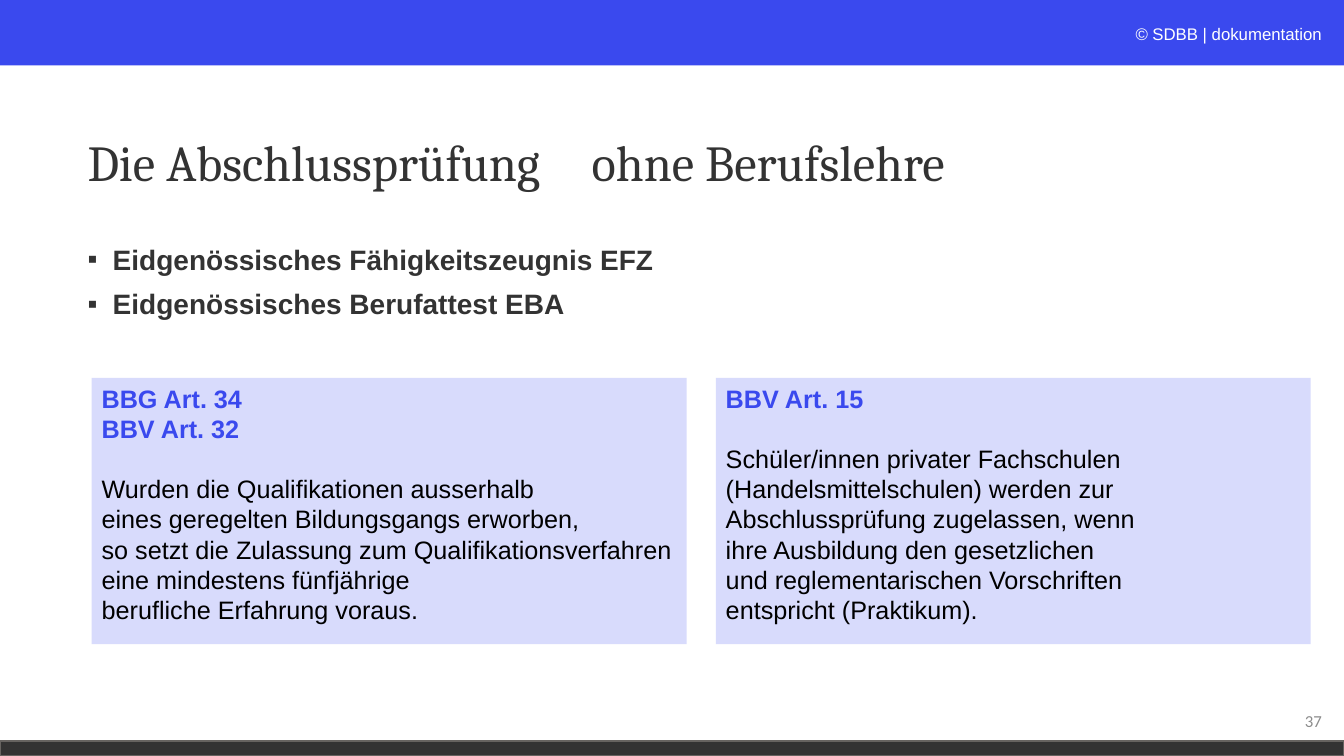
import pptx
import pptx.dml.color
import pptx.enum.shapes
import pptx.enum.text
import pptx.oxml.ns
import pptx.util
from lxml import etree
from pptx.util import Inches

RGBColor = pptx.dml.color.RGBColor
PP_ALIGN = pptx.enum.text.PP_ALIGN
MSO_ANCHOR = pptx.enum.text.MSO_ANCHOR

BLUE = RGBColor(0x3A, 0x49, 0xEE)
PALE_BLUE = RGBColor(0xD8, 0xDB, 0xFC)
DARK = RGBColor(0x33, 0x33, 0x33)
EDGE = RGBColor(0x66, 0x63, 0x60)
GREY = RGBColor(0x8C, 0x8C, 0x8C)
NEAR_WHITE = RGBColor(0xFC, 0xFD, 0xFE)
WHITE = RGBColor(0xFF, 0xFF, 0xFF)
BLACK = RGBColor(0, 0, 0)

SLIDE_WIDTH, SLIDE_HEIGHT = Inches(13.33), Inches(7.5)
MARGIN = Inches(0.77)
TEXT_WIDTH = Inches(11.5)
CARD_LEFT, CARD_TOP = Inches(0.91), Inches(3.75)
CARD_WIDTH, CARD_HEIGHT = Inches(5.9), Inches(2.64)
CARD_STEP = CARD_WIDTH + Inches(0.29)

DEGREES = ["Eidgenössisches Fähigkeitszeugnis EFZ", "Eidgenössisches Berufattest EBA"]
CARDS = [
    (["BBG Art. 34", "BBV Art. 32"],
     ["Wurden die Qualifikationen ausserhalb",
      "eines geregelten Bildungsgangs erworben,",
      "so setzt die Zulassung zum Qualifikationsverfahren",
      "eine mindestens fünfjährige",
      "berufliche Erfahrung voraus."]),
    (["BBV Art. 15"],
     ["Schüler/innen privater Fachschulen",
      "(Handelsmittelschulen) werden zur",
      "Abschlussprüfung zugelassen, wenn",
      "ihre Ausbildung den gesetzlichen",
      "und reglementarischen Vorschriften",
      "entspricht (Praktikum)."]),
]


def add_run(paragraph, text, size, color, font="Arial", bold=False, italic=False):
    run = paragraph.add_run()
    run.text = text
    run.font.size = pptx.util.Pt(size)
    run.font.name = font
    run.font.bold = bold
    run.font.italic = italic
    run.font.color.rgb = color


def add_paragraph(frame, index):
    return frame.paragraphs[0] if index == 0 else frame.add_paragraph()


def add_sub(parent, tag, **attributes):
    return etree.SubElement(parent, pptx.oxml.ns.qn(tag), attributes)


def add_panel(slide, left, top, width, height, fill):
    panel = slide.shapes.add_shape(
        pptx.enum.shapes.MSO_SHAPE.RECTANGLE, left, top, width, height)
    panel.shadow.inherit = False
    panel.fill.solid()
    panel.fill.fore_color.rgb = fill
    panel.line.fill.background()
    return panel


def add_text_frame(slide, left, top, width, height, anchor=MSO_ANCHOR.TOP):
    frame = slide.shapes.add_textbox(left, top, width, height).text_frame
    frame.word_wrap = True
    frame.vertical_anchor = anchor
    return frame


def add_header(slide, left, top, width, height):
    add_panel(slide, left, top, width, height, BLUE)
    copyright_width = Inches(4.59)
    frame = add_text_frame(slide, left + width - copyright_width - Inches(0.12),
                           top + Inches(0.19), copyright_width, Inches(0.3))
    paragraph = frame.paragraphs[0]
    paragraph.alignment = PP_ALIGN.RIGHT
    add_run(paragraph, "© ", 12, NEAR_WHITE, italic=True)
    add_run(paragraph, "SDBB | dokumentation", 12, WHITE)


def add_footer(slide, left, top, width, height):
    bar = add_panel(slide, left, top, width, height, DARK)
    bar.line.color.rgb = EDGE
    bar.line.width = pptx.util.Pt(1)
    number_width = Inches(3)
    frame = add_text_frame(slide, left + width - number_width - Inches(0.12),
                           top - Inches(0.4), number_width, Inches(0.4),
                           MSO_ANCHOR.MIDDLE)
    paragraph = frame.paragraphs[0]
    paragraph.alignment = PP_ALIGN.RIGHT
    add_run(paragraph, "37", 12, GREY, "Calibri")


def add_title(slide, left, top, width, height):
    frame = add_text_frame(slide, left, top, width, height, MSO_ANCHOR.MIDDLE)
    paragraph = frame.paragraphs[0]
    tabs = add_sub(paragraph._p.get_or_add_pPr(), "a:tabLst")
    add_sub(tabs, "a:tab", pos=str(Inches(5)), algn="l")
    paragraph.line_spacing = 0.9
    add_run(paragraph, "Die Abschlussprüfung\tohne Berufslehre", 36, DARK, "Cambria")


def add_degrees(slide, left, top, width, height):
    frame = add_text_frame(slide, left, top, width, height)
    for index, degree in enumerate(DEGREES):
        paragraph = add_paragraph(frame, index)
        properties = paragraph._p.get_or_add_pPr()
        properties.set("marL", str(Inches(0.25)))
        properties.set("indent", str(-Inches(0.25)))
        add_sub(properties, "a:buFont", typeface="Arial")
        add_sub(properties, "a:buChar", char="▪")
        paragraph.line_spacing = 0.9
        if index:
            paragraph.space_before = pptx.util.Pt(10)
        add_run(paragraph, degree, 20, DARK, bold=True)


def add_card(slide, left, top, width, height, articles, lines):
    frame = add_panel(slide, left, top, width, height, PALE_BLUE).text_frame
    frame.word_wrap = True
    frame.vertical_anchor = MSO_ANCHOR.TOP
    for index, line in enumerate(articles + lines):
        is_article = index < len(articles)
        paragraph = add_paragraph(frame, index)
        paragraph.alignment = PP_ALIGN.LEFT
        if index == len(articles):
            paragraph.space_before = pptx.util.Pt(21.5)
        add_run(paragraph, line, 18, BLUE if is_article else BLACK, bold=is_article)


def main():
    presentation = pptx.Presentation()
    presentation.slide_width = SLIDE_WIDTH
    presentation.slide_height = SLIDE_HEIGHT
    slide = presentation.slides.add_slide(presentation.slide_layouts[6])
    footer_height = Inches(0.15)
    add_header(slide, 0, 0, SLIDE_WIDTH, Inches(0.65))
    add_footer(slide, 0, SLIDE_HEIGHT - footer_height, SLIDE_WIDTH, footer_height)
    add_title(slide, MARGIN, Inches(0.91), TEXT_WIDTH, Inches(1.45))
    add_degrees(slide, MARGIN, Inches(2.39), TEXT_WIDTH, Inches(1.2))
    for column, (articles, lines) in enumerate(CARDS):
        add_card(slide, CARD_LEFT + column * CARD_STEP, CARD_TOP,
                 CARD_WIDTH, CARD_HEIGHT, articles, lines)
    presentation.save("out.pptx")


if __name__ == "__main__":
    main()
